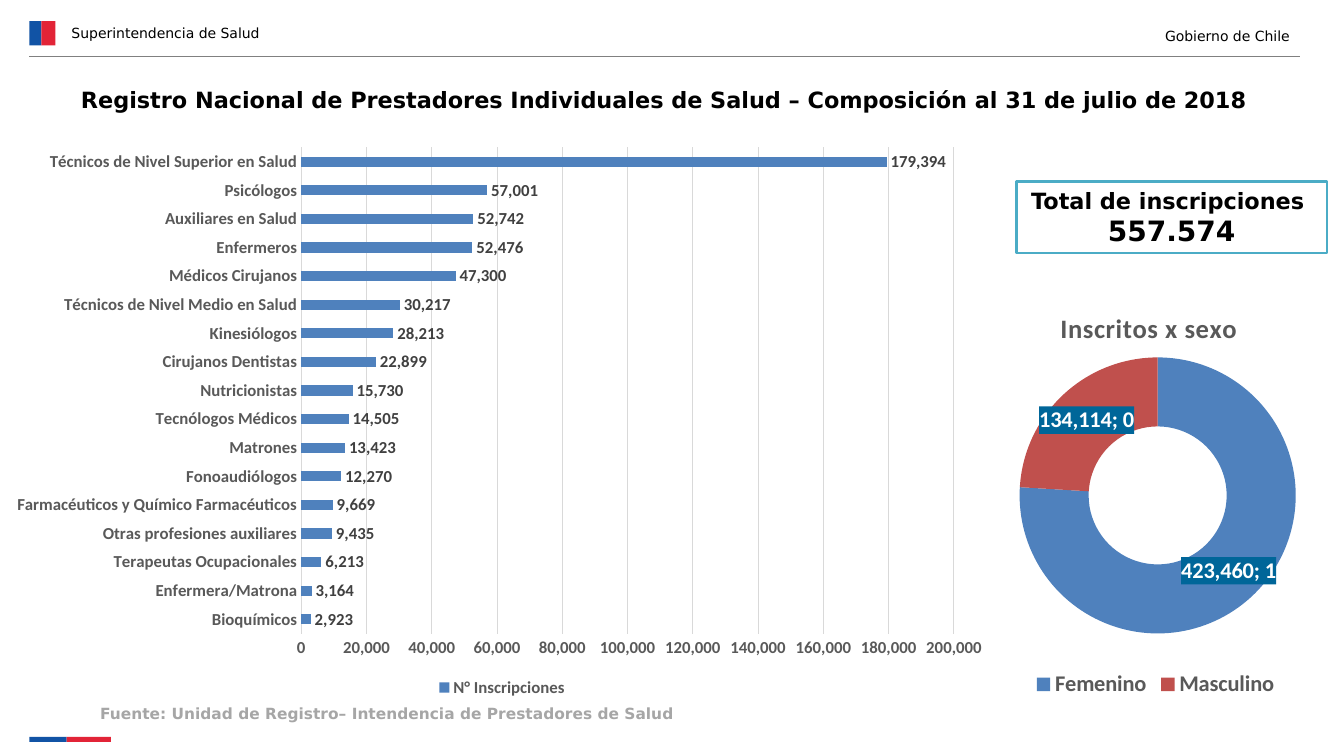
import pptx
import pptx.chart.data
import pptx.dml.color
import pptx.enum.chart
import pptx.enum.shapes
import pptx.enum.text
import pptx.oxml
import pptx.util
from lxml import etree

WIDTH, HEIGHT = pptx.util.Inches(13.33), pptx.util.Inches(7.5)
COLORS = {
    "blue": "1153A5", "red": "E22437", "rule": "808080", "black": "000000",
    "source": "A6A6A6", "white": "FFFFFF", "frame": "4BACC6", "bar": "4F81BD",
    "male": "C0504D", "axis": "595959", "grid": "D9D9D9", "label": "404040",
    "tag": "006699",
}
NS = 'xmlns:c="{}" xmlns:a="{}"'.format(
    "http://schemas.openxmlformats.org/drawingml/2006/chart",
    "http://schemas.openxmlformats.org/drawingml/2006/main")
ENROLLED = {
    "Bioquímicos": 2923,
    "Enfermera/Matrona": 3164,
    "Terapeutas Ocupacionales": 6213,
    "Otras profesiones auxiliares": 9435,
    "Farmacéuticos y Químico Farmacéuticos": 9669,
    "Fonoaudiólogos": 12270,
    "Matrones": 13423,
    "Tecnólogos Médicos": 14505,
    "Nutricionistas": 15730,
    "Cirujanos Dentistas": 22899,
    "Kinesiólogos": 28213,
    "Técnicos de Nivel Medio en Salud": 30217,
    "Médicos Cirujanos": 47300,
    "Enfermeros": 52476,
    "Auxiliares en Salud": 52742,
    "Psicólogos": 57001,
    "Técnicos de Nivel Superior en Salud": 179394,
}
BY_SEX = {"Femenino": 423460, "Masculino": 134114}


def rgb(name):
    """Return the named colour."""
    return pptx.dml.color.RGBColor.from_string(COLORS[name])


def area(x, y, w, h):
    """Turn percentages of the slide into left, top, width and height."""
    return [int(share * side / 100)
            for share, side in zip((x, y, w, h), (WIDTH, HEIGHT) * 2)]


def set_font(font, size, color, bold=True, name="Calibri"):
    """Format a font."""
    font.size, font.bold, font.name = pptx.util.Pt(size), bold, name
    font.color.rgb = rgb(color)


def write(sp, text, sizes, align, color="black", bold=True, wrap=True):
    """Fill a shape with one paragraph per line, sized in turn."""
    tf = sp.text_frame
    tf.text = text
    tf.word_wrap = wrap
    tf.vertical_anchor = pptx.enum.text.MSO_ANCHOR.MIDDLE
    for p, size in zip(tf.paragraphs, sizes):
        p.alignment = align
        for r in p.runs:
            set_font(r.font, size, color, bold, "DejaVu Sans")


def add_box(shapes, place, fill):
    """Add a plain filled rectangle."""
    sp = shapes.add_shape(pptx.enum.shapes.MSO_SHAPE.RECTANGLE, *area(*place))
    sp.shadow.inherit = False
    sp.fill.solid()
    sp.fill.fore_color.rgb = rgb(fill)
    sp.line.fill.background()
    return sp


def add_flag(s, x, y, blue, red, h):
    """Add a grouped blue and red band."""
    group = s.shapes.add_group_shape()
    add_box(group.shapes, (x, y, blue, h), "blue")
    add_box(group.shapes, (x + blue, y, red, h), "red")


def add_rule(s, x, y, w):
    """Add the thin line under the header."""
    left, top, width, _ = area(x, y, w, 0)
    line = s.shapes.add_connector(
        pptx.enum.shapes.MSO_CONNECTOR.STRAIGHT, left, top, left + width, top)
    line.line.color.rgb = rgb("rule")
    line.line.width = pptx.util.Pt(0.25)
    etree.SubElement(line._element.spPr, pptx.oxml.ns.qn("a:effectLst"))


def place_part(parent, x, y, w=None, h=None):
    """Set a manual layout for a plot area or title, in shares of the chart."""
    for old in parent.findall(pptx.oxml.ns.qn("c:layout")):
        parent.remove(old)
    modes = '<c:xMode val="edge"/><c:yMode val="edge"/>'
    target = '<c:layoutTarget val="inner"/>' if w else ""
    sizes = f'<c:w val="{w}"/><c:h val="{h}"/>' if w else ""
    layout = pptx.oxml.parse_xml(
        f'<c:layout {NS}><c:manualLayout>{target}{modes}<c:x val="{x}"/>'
        f'<c:y val="{y}"/>{sizes}</c:manualLayout></c:layout>')
    text = parent.find(pptx.oxml.ns.qn("c:tx"))
    if text is None:
        parent.insert(0, layout)
    else:
        text.addnext(layout)


def add_chart(s, kind, place, name, values, size, label_color, plot_place):
    """Add a chart with a bottom legend and value labels."""
    data = pptx.chart.data.CategoryChartData(number_format="#,##0")
    data.categories = list(values)
    data.add_series(name, list(values.values()))
    chart = s.shapes.add_chart(kind, *area(*place), data).chart
    set_font(chart.font, size, "black")
    chart.has_title = False
    chart.has_legend = True
    chart.legend.position = pptx.enum.chart.XL_LEGEND_POSITION.BOTTOM
    chart.legend.include_in_layout = False
    set_font(chart.legend.font, size, "axis")
    place_part(chart._chartSpace.chart.plotArea, *plot_place)
    labels = chart.plots[0].series[0].data_labels
    labels.show_value = True
    labels.number_format, labels.number_format_is_linked = "#,##0", False
    set_font(labels.font, size, label_color)
    return chart, labels


def add_profession_bars(s):
    """Add the bar chart of enrolments by profession."""
    chart, labels = add_chart(
        s, pptx.enum.chart.XL_CHART_TYPE.BAR_CLUSTERED, (0, 18, 74.72, 74.8),
        "N° Inscripciones", ENROLLED, 12, "label", (0.3, 0.02, 0.65, 0.86))
    labels.position = pptx.enum.chart.XL_LABEL_POSITION.OUTSIDE_END
    plot = chart.plots[0]
    plot.gap_width, plot.vary_by_categories = 182, False
    fill = plot.series[0].format.fill
    fill.solid()
    fill.fore_color.rgb = rgb("bar")
    values = chart.value_axis
    values.minimum_scale, values.maximum_scale, values.major_unit = 0, 200000, 20000
    values.tick_labels.number_format = "#,##0"
    values.tick_labels.number_format_is_linked = False
    for axis in (chart.category_axis, values):
        axis.major_tick_mark = pptx.enum.chart.XL_TICK_MARK.NONE
        set_font(axis.tick_labels.font, 12, "axis")
    for line in (chart.category_axis.format.line, values.major_gridlines.format.line):
        line.color.rgb = rgb("grid")
        line.width = pptx.util.Pt(0.75)
    values.format.line.fill.background()


def add_sex_ring(s):
    """Add the doughnut of enrolments by sex."""
    chart, labels = add_chart(
        s, pptx.enum.chart.XL_CHART_TYPE.DOUGHNUT, (69.09, 35.87, 33.76, 57.07),
        "Series 1", BY_SEX, 16, "white", (0.2, 0.2, 0.61, 0.64))
    chart.has_title = True
    tf = chart.chart_title.text_frame
    tf.text = "Inscritos x sexo"
    r = tf.paragraphs[0].runs[0]
    set_font(r.font, 19, "axis")
    r._r.get_or_add_rPr().set("spc", "50")
    place_part(chart.chart_title._element, 0.28, 0.08)
    for point, color in enumerate(("bar", "male")):
        fill = chart.plots[0].series[0].points[point].format.fill
        fill.solid()
        fill.fore_color.rgb = rgb(color)
    labels.show_percentage = True
    element = labels._element
    element.find(pptx.oxml.ns.qn("c:txPr")).addprevious(pptx.oxml.parse_xml(
        f'<c:spPr {NS}><a:solidFill><a:srgbClr val="{COLORS["tag"]}"/>'
        '</a:solidFill></c:spPr>'))
    element.find(pptx.oxml.ns.qn("c:showBubbleSize")).addnext(
        pptx.oxml.parse_xml(f"<c:separator {NS}>; </c:separator>"))


def main():
    """Build and save the slide."""
    align = pptx.enum.text.PP_ALIGN
    prs = pptx.Presentation()
    prs.slide_width, prs.slide_height = WIDTH, HEIGHT
    s = prs.slides.add_slide(prs.slide_layouts[5])
    title = s.shapes.title
    title.left, title.top, title.width, title.height = area(4.58, 10.67, 89.65, 4.93)
    write(title, "Registro Nacional de Prestadores Individuales de Salud – "
          "Composición al 31 de julio de 2018", [16], align.CENTER, wrap=False)
    add_flag(s, 2.18, 2.8, 0.9, 1.05, 3.2)
    add_flag(s, 2.18, 97.47, 2.78, 3.3, 0.67)
    add_rule(s, 2.18, 7.47, 94.52)
    for text, place, size, side, color, bold in (
            ("Superintendencia de Salud", (4.58, 2.13, 32.03, 4.53),
             10, align.LEFT, "black", False),
            ("Gobierno de Chile", (64.67, 2.53, 32.03, 4.53),
             10, align.RIGHT, "black", False),
            ("Fuente: Unidad de Registro– Intendencia de Prestadores de Salud",
             (-1.95, 92.4, 61.52, 3.87), 11, align.CENTER, "source", True)):
        write(s.shapes.add_textbox(*area(*place)), text, [size], side, color, bold)
    add_profession_bars(s)
    total = add_box(s.shapes, (75.62, 24, 23.11, 9.47), "white")
    total.line.color.rgb = rgb("frame")
    total.line.width = pptx.util.Pt(2)
    write(total, "Total de inscripciones \n557.574", [16, 20], align.CENTER)
    add_sex_ring(s)
    prs.save("out.pptx")


if __name__ == "__main__":
    main()
